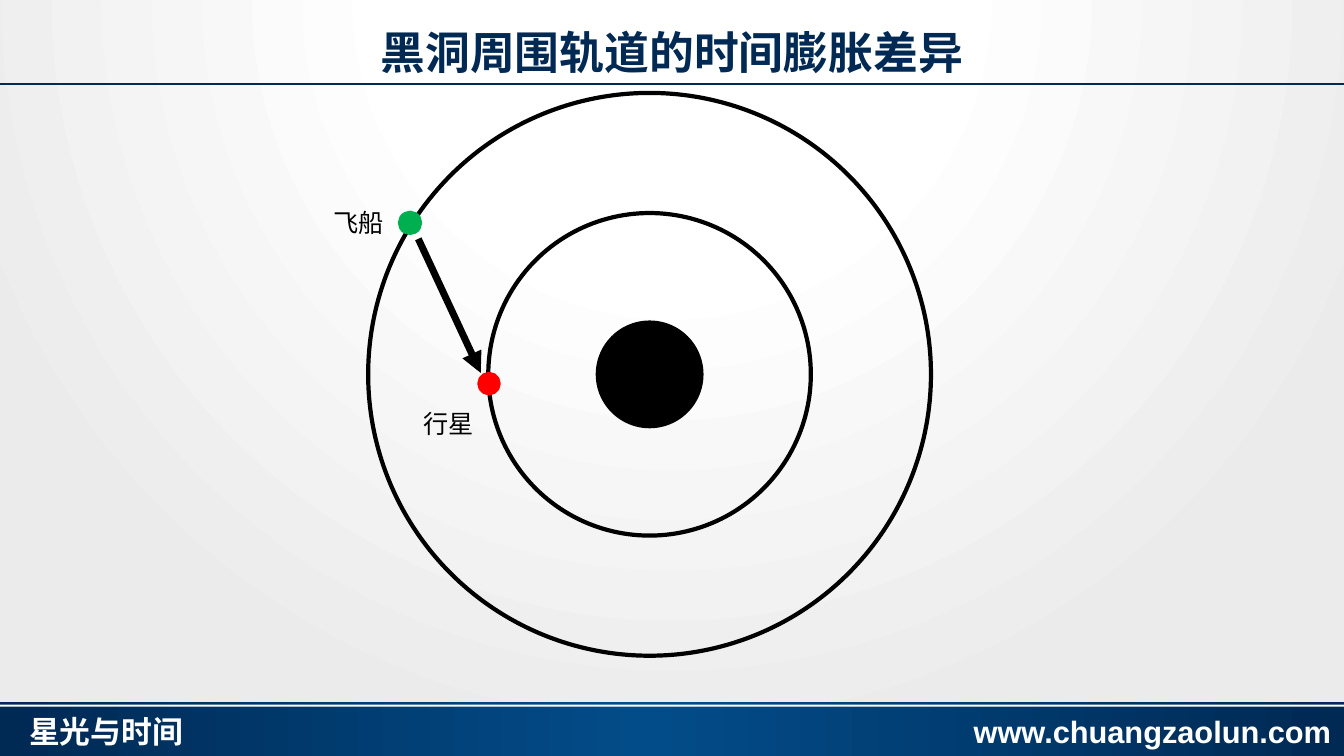
import pptx
import pptx.util
import pptx.dml.color
import pptx.enum.shapes
import pptx.enum.text
import pptx.oxml
import pptx.oxml.ns

Pt = pptx.util.Pt
RGBColor = pptx.dml.color.RGBColor
MSO_SHAPE = pptx.enum.shapes.MSO_SHAPE
STRAIGHT = pptx.enum.shapes.MSO_CONNECTOR.STRAIGHT
ALIGN = pptx.enum.text.PP_ALIGN
ANCHOR = pptx.enum.text.MSO_ANCHOR

NAVY = RGBColor(0x00, 0x29, 0x53)
TITLE_NAVY = RGBColor(0x00, 0x29, 0x54)
BLUE = RGBColor(0x02, 0x4C, 0x89)
WHITE = RGBColor(0xFF, 0xFF, 0xFF)
GREY = RGBColor(0xEB, 0xEB, 0xEB)
BLACK = RGBColor(0x00, 0x00, 0x00)
RED = RGBColor(0xFF, 0x00, 0x00)
GREEN = RGBColor(0x00, 0xB0, 0x50)


def set_gradient(owner, fill, stops, direction):
    """Give a fill colour stops (percent, colour, opacity) and a direction."""
    fill.gradient()
    stop_xml = "".join(
        f'<a:gs pos="{position * 1000}"><a:srgbClr val="{color}">'
        f'<a:alpha val="{opacity * 1000}"/></a:srgbClr></a:gs>'
        for position, color, opacity in stops)
    gradient = pptx.oxml.parse_xml(
        f'<a:gradFill {pptx.oxml.ns.nsdecls("a")} rotWithShape="1">'
        f'<a:gsLst>{stop_xml}</a:gsLst>{direction}</a:gradFill>')
    default = owner.find(".//" + pptx.oxml.ns.qn("a:gradFill"))
    default.getparent().replace(default, gradient)


def add_line(start, end, color, width):
    line = slide.shapes.add_connector(STRAIGHT, *map(Pt, start + end))
    line.line.color.rgb = color
    line.line.width = Pt(width)
    line._element.spPr.append(pptx.oxml.parse_xml(
        f'<a:effectLst {pptx.oxml.ns.nsdecls("a")}/>'))
    return line


presentation = pptx.Presentation()
presentation.slide_width, presentation.slide_height = Pt(960), Pt(540)
slide = presentation.slides.add_slide(presentation.slide_layouts[6])

# Background
set_gradient(
    slide._element, slide.background.fill,
    [(0, WHITE, 66), (35, WHITE, 100), (100, GREY, 100)],
    '<a:path path="circle"><a:fillToRect l="50000" t="-80000" '
    'r="50000" b="180000"/></a:path>')

# Title rule and footer bar
add_line((0, 60), (960, 60), NAVY, 1.75)
footer = slide.shapes.add_shape(
    MSO_SHAPE.RECTANGLE, 0, Pt(501.6), Pt(960), Pt(39.6))
set_gradient(
    footer._element, footer.fill,
    [(0, NAVY, 100), (48, BLUE, 100), (100, NAVY, 100)],
    '<a:lin ang="0" scaled="0"/>')
stripe = slide.shapes.add_shape(
    MSO_SHAPE.RECTANGLE, 0, Pt(503.3), Pt(960), Pt(1.4))
stripe.fill.solid()
stripe.fill.fore_color.rgb = WHITE
for band in (footer, stripe):
    band.line.fill.background()
    band.shadow.inherit = False

# Black hole, orbits, planet and spaceship: centre x, centre y, radius
for x, y, radius, fill, outline in [
    (464, 267.4, 37, BLACK, BLACK),
    (464, 267.4, 115.2, None, BLACK),
    (464, 267.4, 201, None, BLACK),
    (349.3, 274, 6.9, RED, RED),
    (292.9, 159.2, 7.2, GREEN, GREEN),
]:
    circle = slide.shapes.add_shape(
        MSO_SHAPE.OVAL, Pt(x - radius), Pt(y - radius),
        Pt(2 * radius), Pt(2 * radius))
    circle.shadow.inherit = False
    circle.line.color.rgb = outline
    circle.line.width = Pt(3)
    if fill is None:
        circle.fill.background()
    else:
        circle.fill.solid()
        circle.fill.fore_color.rgb = fill

# Arrow from spaceship to planet
arrow = add_line((298.8, 170.6), (343.4, 266.4), BLACK, 5)
arrow.line._get_or_add_ln().append(pptx.oxml.parse_xml(
    f'<a:tailEnd {pptx.oxml.ns.nsdecls("a")} type="triangle"/>'))

# Title and labels
for text, left, top, width, height, size, font, color, align in [
    ("黑洞周围轨道的时间膨胀差异", 0, 14.4, 960, 46, 32, "Arial", TITLE_NAVY, ALIGN.CENTER),
    ("飞船", 231.1, 144.7, 52, 29, 18, "Karla", BLACK, ALIGN.LEFT),
    ("行星", 295.2, 288, 52, 29, 18, "Karla", BLACK, ALIGN.LEFT),
    ("星光与时间", 20.9, 512, 284, 28, 22, "Arial", WHITE, ALIGN.LEFT),
    ("www.chuangzaolun.com", 695.5, 512, 260, 28, 22, "Arial", WHITE, ALIGN.LEFT),
]:
    box = slide.shapes.add_textbox(Pt(left), Pt(top), Pt(width), Pt(height))
    frame = box.text_frame
    frame.word_wrap = True
    frame.vertical_anchor = ANCHOR.TOP
    paragraph = frame.paragraphs[0]
    paragraph.text = text
    paragraph.alignment = align
    paragraph.font.size = Pt(size)
    paragraph.font.name = font
    paragraph.font.bold = font == "Arial"
    paragraph.font.color.rgb = color
    if color == WHITE:
        frame.margin_left = frame.margin_right = 0
        frame.margin_top = frame.margin_bottom = 0
        paragraph.line_spacing = 0.9

presentation.save("out.pptx")
